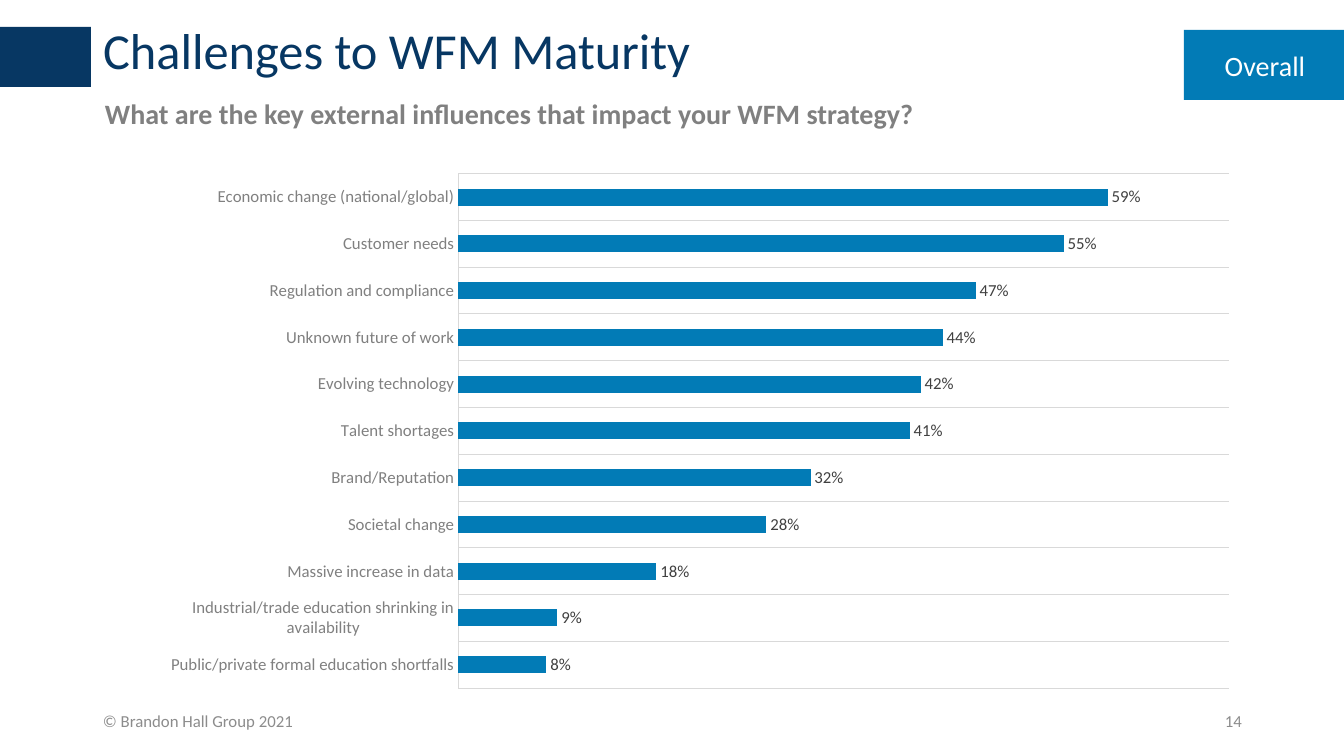
import pptx
import pptx.chart.data
import pptx.dml.color
import pptx.enum.chart
import pptx.enum.shapes
import pptx.enum.text
import pptx.util
from lxml import etree

EMU_PER_PX = 12192000 / 1344
FONT = "Calibri"
NAVY, BLUE, WHITE = "073763", "027BB6", "FFFFFF"
GREY, FOOTER_GREY, LABEL_GREY, RULE_GREY = "808080", "8C8C8C", "404040", "D9D9D9"
ALIGN = pptx.enum.text.PP_ALIGN
ANCHOR = pptx.enum.text.MSO_ANCHOR

INFLUENCES = {
    "Economic change (national/global)": 0.59,
    "Customer needs": 0.55,
    "Regulation and compliance": 0.47,
    "Unknown future of work": 0.44,
    "Evolving technology": 0.42,
    "Talent shortages": 0.41,
    "Brand/Reputation": 0.32,
    "Societal change": 0.28,
    "Massive increase in data": 0.18,
    "Industrial/trade education shrinking in availability": 0.09,
    "Public/private formal education shortfalls": 0.08,
}


def px(length):
    return pptx.util.Emu(round(length * EMU_PER_PX))


def colour(value):
    return pptx.dml.color.RGBColor.from_string(value)


def style_font(font, size, ink, bold=False):
    font.name = FONT
    font.size = pptx.util.Pt(size)
    font.bold = bold
    font.color.rgb = colour(ink)


def write(shape, text, size=12, ink=GREY, bold=False, align=ALIGN.LEFT,
          anchor=ANCHOR.TOP, spacing=1.0):
    frame = shape.text_frame
    frame.word_wrap = True
    frame.auto_size = pptx.enum.text.MSO_AUTO_SIZE.NONE
    frame.vertical_anchor = anchor
    para = frame.paragraphs[0]
    para.alignment = align
    para.line_spacing = spacing
    span = para.add_run()
    span.text = text
    style_font(span.font, size, ink, bold)


def add_text(page, box, text, **form):
    write(page.shapes.add_textbox(*map(px, box)), text, **form)


def add_block(page, box, fill):
    block = page.shapes.add_shape(
        pptx.enum.shapes.MSO_SHAPE.RECTANGLE, *map(px, box))
    block.shadow.inherit = False
    block.fill.solid()
    block.fill.fore_color.rgb = colour(fill)
    block.line.fill.background()
    return block


def add_header(page, left, top, width):
    # Accent bar, title, question and scope tag
    add_block(page, (-1, top + 6, 92, 60), NAVY)
    title = page.shapes.title
    title.left, title.top, title.width, title.height = map(
        px, (left, top, width, 162))
    write(title, "Challenges to WFM Maturity", size=36, ink=NAVY, spacing=0.9)
    add_text(page, (left + 2, top + 71, 857, 44),
             "What are the key external influences that impact your WFM strategy?",
             size=20, bold=True)
    tag = add_block(page, (left + 1091, top + 9, 162, 70), BLUE)
    write(tag, "Overall", size=20, ink=WHITE, align=ALIGN.CENTER,
          anchor=ANCHOR.MIDDLE)


def fix_plot_area(chart, **fractions):
    plot_area = chart.plots[0]._element.getparent()
    space = "{" + plot_area.nsmap["c"] + "}"
    for old in plot_area.findall(space + "layout"):
        plot_area.remove(old)
    layout = etree.Element(space + "layout")
    manual = etree.SubElement(layout, space + "manualLayout")
    settings = {"layoutTarget": "inner", "xMode": "edge", "yMode": "edge"}
    for name, value in (settings | fractions).items():
        etree.SubElement(manual, space + name, val=str(value))
    plot_area.insert(0, layout)


def style_rule(line):
    line.color.rgb = colour(RULE_GREY)
    line.width = pptx.util.Pt(0.75)


def add_influence_chart(page, box):
    data = pptx.chart.data.CategoryChartData(number_format="0%")
    data.categories = INFLUENCES.keys()
    data.add_series("Series 1", INFLUENCES.values())
    chart = page.shapes.add_chart(
        pptx.enum.chart.XL_CHART_TYPE.BAR_CLUSTERED, *map(px, box), data).chart
    chart.has_legend = False
    chart.has_title = False
    style_font(chart.font, 10, "000000")
    fix_plot_area(chart, x=0.28, y=0.02, w=0.7, h=0.96)

    # Axes
    categories = chart.category_axis
    categories.reverse_order = True
    categories.major_tick_mark = pptx.enum.chart.XL_TICK_MARK.NONE
    categories.has_major_gridlines = True
    style_rule(categories.format.line)
    style_rule(categories.major_gridlines.format.line)
    style_font(categories.tick_labels.font, 12, GREY)
    values = chart.value_axis
    values.minimum_scale, values.maximum_scale = 0, 0.7
    values.has_major_gridlines = False
    values.visible = False

    # Bars and their labels
    plot = chart.plots[0]
    plot.gap_width = 175
    plot.vary_by_categories = False
    bars = plot.series[0]
    bars.format.fill.solid()
    bars.format.fill.fore_color.rgb = colour(BLUE)
    labels = bars.data_labels
    labels.show_value = True
    labels.number_format = "0%"
    labels.number_format_is_linked = False
    labels.position = pptx.enum.chart.XL_LABEL_POSITION.OUTSIDE_END
    style_font(labels.font, 12, LABEL_GREY)


def add_footer(page, left, top, width):
    form = dict(ink=FOOTER_GREY, anchor=ANCHOR.MIDDLE)
    add_text(page, (left, top, 454, 40), "© Brandon Hall Group 2021", **form)
    add_text(page, (left + width - 302, top, 302, 40), "14",
             align=ALIGN.RIGHT, **form)


def main():
    deck = pptx.Presentation()
    deck.slide_width, deck.slide_height = px(1344), px(756)
    page = deck.slides.add_slide(deck.slide_layouts.get_by_name("Title Only"))
    add_header(page, 93, 21, 1159)
    add_influence_chart(page, (150, 163, 1101, 536))
    add_footer(page, 93, 701, 1159)
    deck.save("out.pptx")


if __name__ == "__main__":
    main()
